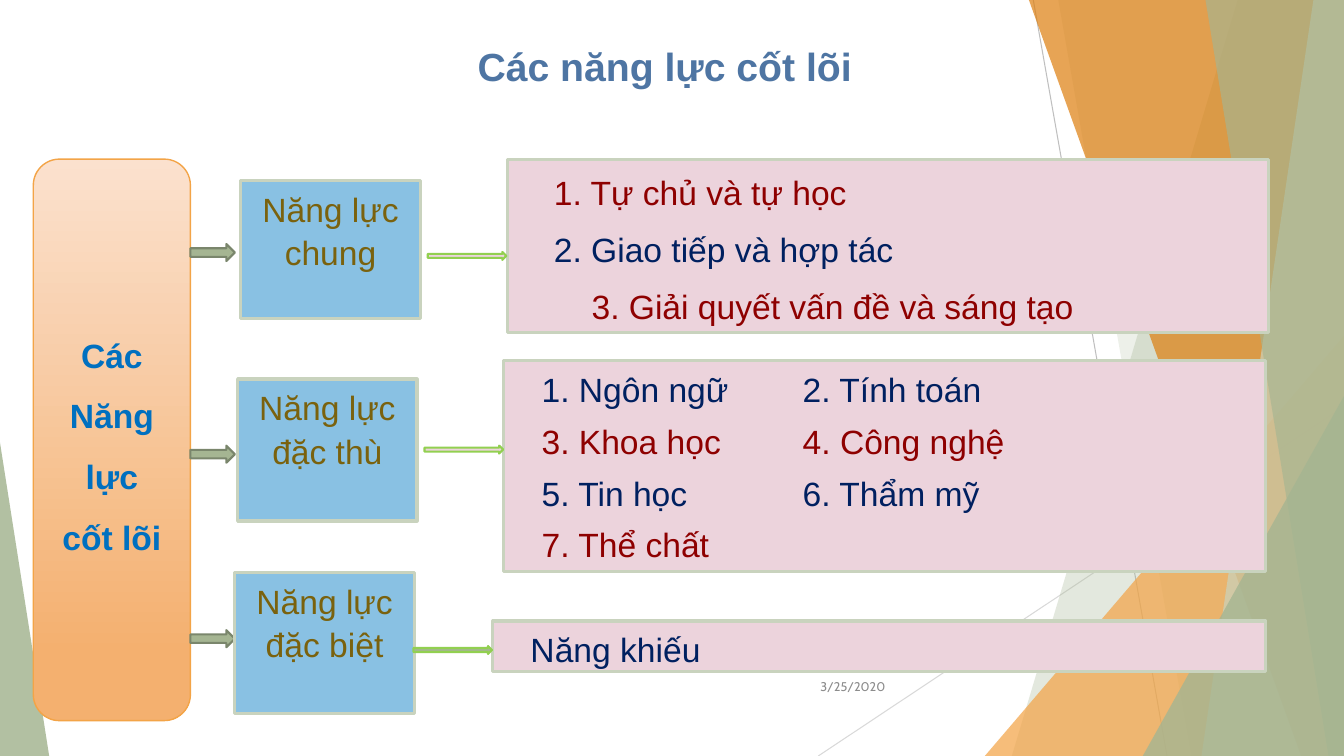
from lxml import etree
from pptx import Presentation
from pptx import util as u
from pptx.dml.color import RGBColor
from pptx.enum import shapes, text
from pptx.oxml.ns import qn

WIDE, HIGH = 33.87, 19.05
HUES = {
    "sage": "A5B592", "pale": "C9D3BE", "moss": "7A866C", "lime": "92D050",
    "amber": "F3A447", "rust": "DD7E0E", "cream": "FBE1CE", "peach": "F4B06F",
    "sky": "89C1E3", "pink": "ECD3DC", "olive": "7A620E", "navy": "002060",
    "red": "8E0000", "blue": "0070C0", "steel": "4E75A3", "gray": "8C8C8C",
    "mist": "BFBFBF", "fog": "D9D9D9",
}
FORM = shapes.MSO_SHAPE
SIDE = text.PP_ALIGN
HOLD = text.MSO_ANCHOR


def hue(name):
    return RGBColor.from_string(HUES[name])


def paint(shape, fill, alpha=100, line=None, width=1):
    shape.shadow.inherit = False
    shape.fill.solid()
    shape.fill.fore_color.rgb = hue(fill)
    if alpha < 100:
        tone = shape.fill._xPr.find(".//" + qn("a:srgbClr"))
        etree.SubElement(tone, qn("a:alpha")).set("val", str(alpha * 1000))
    if line:
        shape.line.color.rgb = hue(line)
        shape.line.width = u.Pt(width)
    else:
        shape.line.fill.background()


def add(slide, form, box):
    return slide.shapes.add_shape(form, *map(u.Cm, box))


def write(shape, lines, size=24, side=SIDE.LEFT, hold=HOLD.TOP,
          bold=False, font="Arial", lead=None, gap=0):
    frame = shape.text_frame
    frame.word_wrap = True
    frame.vertical_anchor = hold
    frame.text = "\n".join(words for words, tone in lines)
    for para, (words, tone) in zip(frame.paragraphs, lines):
        para.alignment = side
        para.line_spacing = lead
        para.space_before = u.Pt(gap)
        for run in para.runs:
            run.font.size = u.Pt(size)
            run.font.name = font
            run.font.bold = bold
            run.font.color.rgb = hue(tone)
    return frame


def tab(para, stop):
    tabs = etree.SubElement(para._p.get_or_add_pPr(), qn("a:tabLst"))
    mark = etree.SubElement(tabs, qn("a:tab"))
    mark.set("pos", str(u.Cm(stop)))
    mark.set("algn", "l")


def thread(slide, ends, tone):
    line = slide.shapes.add_connector(
        shapes.MSO_CONNECTOR.STRAIGHT, *map(u.Cm, ends))
    line.line.color.rgb = hue(tone)
    line.line.width = u.Pt(0.75)
    etree.SubElement(line._element.spPr, qn("a:effectLst"))


def band(slide, box, top, base, tone, alpha):
    left, head, wide, high = box
    right, foot = left + wide, head + high
    points = [(top, head), (right, head), (right, foot), (base, foot)]
    path = [(u.Cm(x), u.Cm(y)) for x, y in points]
    pen = slide.shapes.build_freeform(*path[0])
    pen.add_line_segments(path[1:], close=True)
    paint(pen.convert_to_shape(), tone, alpha)


def wedge(slide, box, tip, tone, alpha):
    shape = add(slide, FORM.ISOSCELES_TRIANGLE, box)
    shape.adjustments[0] = tip
    paint(shape, tone, alpha)


def decor(slide, box):
    left, top, wide, high = box
    right, foot = left + wide, top + high
    thread(slide, (26.04, top, 29.41, foot), "mist")
    thread(slide, (right, 10.24, 20.62, foot), "fog")
    band(slide, box, 31.19, 25.5, "sage", 30)
    band(slide, box, 26.67, 30.02, "sage", 20)
    wedge(slide, (24.82, 8.46, right - 24.82, foot - 8.46), 1, "amber", 72)
    band(slide, box, 25.93, 32.79, "rust", 70)
    band(slide, box, 33.1, 30.28, "pale", 70)
    band(slide, box, 30.38, 33.48, "sage", 65)
    wedge(slide, (28.8, 9.98, right - 28.8, foot - 9.98), 1, "sage", 80)
    wedge(slide, (left, 11.15, 1.24, foot - 11.15), 0, "sage", 85)


def label(slide, box, words, tone, **style):
    shape = slide.shapes.add_textbox(*map(u.Cm, box))
    write(shape, [(words, tone)], **style)


def post(slide, box, words, drops):
    left, top, wide, high = box
    shape = add(slide, FORM.ROUNDED_RECTANGLE, box)
    paint(shape, "cream", line="amber")
    shape.fill.gradient()
    shape.fill.gradient_angle = 270
    stops = zip(shape.fill.gradient_stops, ("cream", "peach"), (0, 0.88))
    for stop, tone, place in stops:
        stop.color.rgb = hue(tone)
        stop.position = place
    write(shape, [(word, "blue") for word in words], side=SIDE.CENTER,
          hold=HOLD.MIDDLE, bold=True, lead=1.3, gap=6)
    for drop in drops:
        arrow = add(slide, FORM.RIGHT_ARROW,
                    (left + wide, top + drop, 1.12, 0.43))
        paint(arrow, "sage", line="moss", width=1.5)


def row(slide, box, name, card, drop, lines, inset, lead, tone="pink"):
    left, top, wide, high = box
    shift, rise, tall = card
    tile = add(slide, FORM.RECTANGLE, (left + shift, top + rise, 4.52, tall))
    paint(tile, "sky", line="pale", width=2.25)
    write(tile, [(name, "olive")], side=SIDE.CENTER, lead=u.Pt(31))
    panel = add(slide, FORM.RECTANGLE, box)
    paint(panel, "pink", line="pale", width=2.25)
    frame = write(panel, lines, lead=lead, gap=6)
    frame.margin_left = u.Cm(inset)
    for para in frame.paragraphs:
        if "\t" in para.text:
            tab(para, 6.58)
    arrow = add(slide, FORM.RIGHT_ARROW, (left - 2, top + drop, 1.98, 0.2))
    paint(arrow, tone, line="lime", width=1.5)
    return frame


def main():
    deck = Presentation()
    deck.slide_width, deck.slide_height = u.Cm(WIDE), u.Cm(HIGH)
    slide = deck.slides.add_slide(deck.slide_layouts[6])
    decor(slide, (0, 0, WIDE, HIGH))
    label(slide, (20.02, 16.79, 2.54, 1.02), "3/25/2020", "gray", size=9,
          side=SIDE.RIGHT, hold=HOLD.MIDDLE, font="Cabin")
    label(slide, (0, 1.07, 33.5, 1.37), "Các năng lực cốt lõi", "steel",
          size=28, side=SIDE.CENTER, bold=True, lead=0.9, gap=10)
    post(slide, (0.84, 4.01, 3.96, 14.15),
         ["Các", "Năng", "lực", "cốt lõi"], (2.14, 7.22, 11.87))
    frame = row(slide, (12.78, 4.01, 19.2, 4.37), "Năng lực chung",
                (-6.71, 0.54, 3.48), 2.34,
                [("1. Tự chủ và tự học", "red"),
                 ("2. Giao tiếp và hợp tác", "navy"),
                 ("3. Giải quyết vấn đề và sáng tạo", "red")], 1.18, 1.2)
    last = frame.paragraphs[-1]._p.get_or_add_pPr()
    last.set("marL", str(u.Cm(0.95)))
    row(slide, (12.7, 9.09, 19.2, 5.31), "Năng lực đặc thù",
        (-6.71, 0.46, 3.58), 2.14,
        [("1. Ngôn ngữ\t2. Tính toán", "navy"),
         ("3. Khoa học\t4. Công nghệ", "red"),
         ("5. Tin học\t6. Thẩm mỹ", "navy"),
         ("7. Thể chất", "red")], 0.95, u.Pt(31))
    row(slide, (12.42, 15.65, 19.48, 1.27), "Năng lực đặc biệt",
        (-6.5, -1.22, 3.56), 0.63,
        [("Năng khiếu", "navy")], 0.95, u.Pt(31), tone="sage")
    deck.save("out.pptx")


if __name__ == "__main__":
    main()
